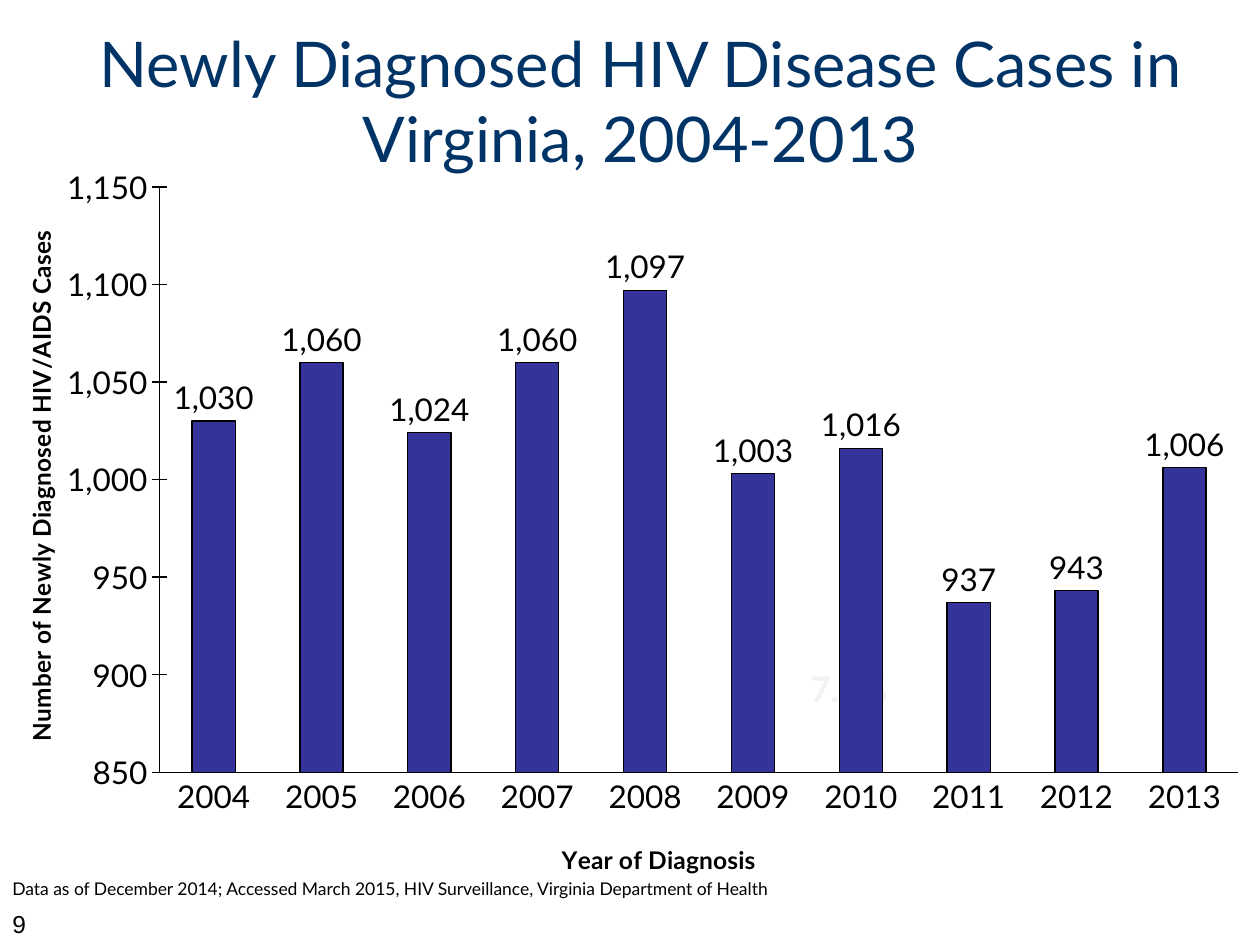
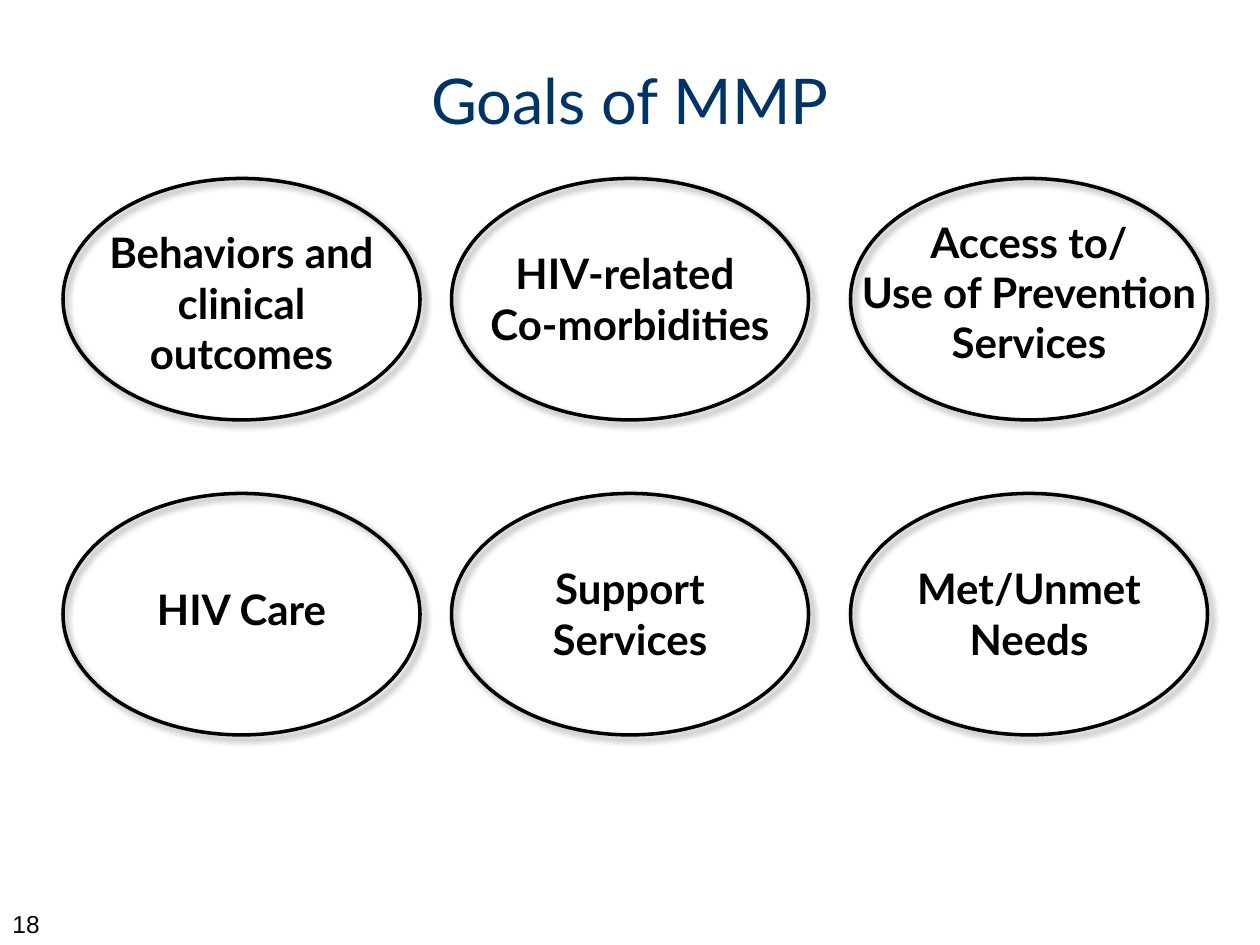
from pptx import Presentation
from pptx.chart.data import CategoryChartData
from pptx.dml.color import RGBColor
from pptx.enum.chart import XL_CHART_TYPE, XL_LABEL_POSITION, XL_TICK_MARK
from pptx.enum.shapes import MSO_SHAPE
from pptx.enum.text import MSO_ANCHOR, PP_ALIGN
from pptx.oxml import parse_xml
from pptx.oxml.ns import nsdecls, qn
from pptx.util import Pt

SCALE = 7620  # EMU per px, 120 px to the inch
BLACK = RGBColor(0x00, 0x00, 0x00)
NAVY = RGBColor(0x00, 0x33, 0x66)
INDIGO = RGBColor(0x33, 0x33, 0x99)
PALE = RGBColor(0xF2, 0xF2, 0xF2)
FONT = "Lato"
LEFT, CENTER = PP_ALIGN.LEFT, PP_ALIGN.CENTER
TOP, MIDDLE = MSO_ANCHOR.TOP, MSO_ANCHOR.MIDDLE
COLUMN = XL_CHART_TYPE.COLUMN_CLUSTERED
OUTSIDE = XL_LABEL_POSITION.OUTSIDE_END
NO_TICK, CROSS = XL_TICK_MARK.NONE, XL_TICK_MARK.CROSS
OVAL = MSO_SHAPE.OVAL

YEARS = [str(year) for year in range(2004, 2014)]
CASES = [1030, 1060, 1024, 1060, 1097, 1003, 1016, 937, 943, 1006]
OVAL_W, OVAL_H = 340, 230
COLS, ROWS = (60, 430, 810), (170, 470)
# Each goal: text, then the offset and width of its label within the oval
GOALS = [
    [("Behaviors and clinical outcomes", 20, 40, 300),
     ("HIV-related \nCo-morbidities", 10, 60, 320),
     ("Access to/\nUse of Prevention Services", -10, 30, 360)],
    [("HIV Care", 10, 80, 320),
     ("Support Services", 10, 60, 320),
     ("Met/Unmet Needs", 10, 60, 320)],
]


def emu(*lengths):
    return [length * SCALE for length in lengths]


def style(font, size, color=BLACK, bold=False, name=FONT):
    font.name, font.size, font.bold = name, Pt(size), bold
    font.color.rgb = color


def text(slide, words, x, y, w, h, size, align=LEFT, anchor=TOP, **look):
    frame = slide.shapes.add_textbox(*emu(x, y, w, h)).text_frame
    frame.word_wrap = True
    frame.vertical_anchor = anchor
    frame.text = words
    for para in frame.paragraphs:
        para.alignment = align
        style(para.font, size, **look)


def start(deck, title, number, x):
    """Add a slide with the shared title and page number."""
    slide = deck.slides.add_slide(deck.slide_layouts[6])
    text(slide, str(number), 0, 860, 280, 30, 14, name="Arial")
    text(slide, title, x, 20, 1080, 150, 36, CENTER, MIDDLE, color=NAVY)
    return slide


def oval(slide, x, y):
    shape = slide.shapes.add_shape(OVAL, *emu(x, y, OVAL_W, OVAL_H))
    shape.fill.background()
    shape.line.color.rgb = BLACK
    shape.line.width = Pt(2)
    shape.shadow.inherit = False
    effects = shape._element.spPr.find(qn("a:effectLst"))
    effects.append(parse_xml(
        f'<a:outerShdw {nsdecls("a")} blurRad="{Pt(4)}" dist="{Pt(3)}" '
        'dir="2700000" rotWithShape="0"><a:srgbClr val="000000">'
        '<a:alpha val="40000"/></a:srgbClr></a:outerShdw>'))


def place(parent, index, target="", **marks):
    """Give a chart part a manual layout as fractions of the chart."""
    old = parent.find(qn("c:layout"))
    if old is not None:
        parent.remove(old)
    modes = '<c:xMode val="edge"/><c:yMode val="edge"/>'
    sizes = "".join(f'<c:{key} val="{val}"/>' for key, val in marks.items())
    parent.insert(index, parse_xml(
        f'<c:layout {nsdecls("c")}><c:manualLayout>{target}{modes}{sizes}'
        '</c:manualLayout></c:layout>'))


def edge(line):
    line.color.rgb = BLACK
    line.width = Pt(0.75)


def axis_look(axis, title, tick, x, y, turn=0):
    axis.has_major_gridlines = False
    axis.major_tick_mark, axis.minor_tick_mark = tick, NO_TICK
    edge(axis.format.line)
    frame = axis.axis_title.text_frame
    frame.text = title
    style(frame.paragraphs[0].runs[0].font, 14, bold=True)
    root = axis.axis_title._element
    root.find(".//" + qn("a:bodyPr")).set("rot", str(turn * 60000))
    place(root, 1, x=x, y=y)


def case_chart(slide):
    data = CategoryChartData(number_format="#,##0")
    data.categories = YEARS
    data.add_series("Series 1", CASES)
    chart = slide.shapes.add_chart(COLUMN, *emu(0, 160, 1180, 680), data).chart
    chart.has_legend = chart.has_title = False
    style(chart.font, 18)
    root = chart._chartSpace
    root.find(qn("c:chart")).addnext(parse_xml(
        f'<c:spPr {nsdecls("c", "a")}><a:noFill/><a:ln><a:noFill/></a:ln></c:spPr>'))
    place(root.find(".//" + qn("c:plotArea")), 0,
          '<c:layoutTarget val="inner"/>', x=0.129, y=0.026, w=0.871, h=0.827)

    axis_look(chart.category_axis, "Year of Diagnosis", NO_TICK, 0.45, 0.945)
    scale = chart.value_axis
    axis_look(scale, "Number of Newly Diagnosed HIV/AIDS Cases", CROSS,
              0.015, 0.087, turn=-90)
    scale.minimum_scale, scale.maximum_scale = 850, 1150
    scale.major_unit = 50
    scale.tick_labels.number_format = "#,##0"
    scale.tick_labels.number_format_is_linked = False

    plot = chart.plots[0]
    plot.gap_width = 150
    plot.vary_by_categories = False
    bars = plot.series[0].format
    bars.fill.solid()
    bars.fill.fore_color.rgb = INDIGO
    edge(bars.line)
    plot.has_data_labels = True
    labels = plot.data_labels
    labels.show_value = True
    labels.position = OUTSIDE
    labels.number_format = "#,##0"
    labels.number_format_is_linked = False
    style(labels.font, 18)


def case_slide(deck):
    slide = start(
        deck, "Newly Diagnosed HIV Disease Cases in Virginia, 2004-2013", 9, 70)
    text(slide, "7.8%", 760, 630, 110, 53, 20, color=PALE, bold=True)
    case_chart(slide)
    text(slide, "Data as of December 2014; Accessed March 2015, "
         "HIV Surveillance, Virginia Department of Health",
         0, 830, 850, 32, 10)


def goal_slide(deck):
    slide = start(deck, "Goals of MMP", 18, 60)
    for y, row in zip(ROWS, GOALS):
        for x, (words, dx, dy, w) in zip(COLS, row):
            oval(slide, x, y)
            text(slide, words, x + dx, y + dy, w, 110, 24, CENTER, bold=True)


def main():
    deck = Presentation()
    deck.slide_width, deck.slide_height = emu(1200, 900)
    case_slide(deck)
    goal_slide(deck)
    deck.save("out.pptx")


if __name__ == "__main__":
    main()
